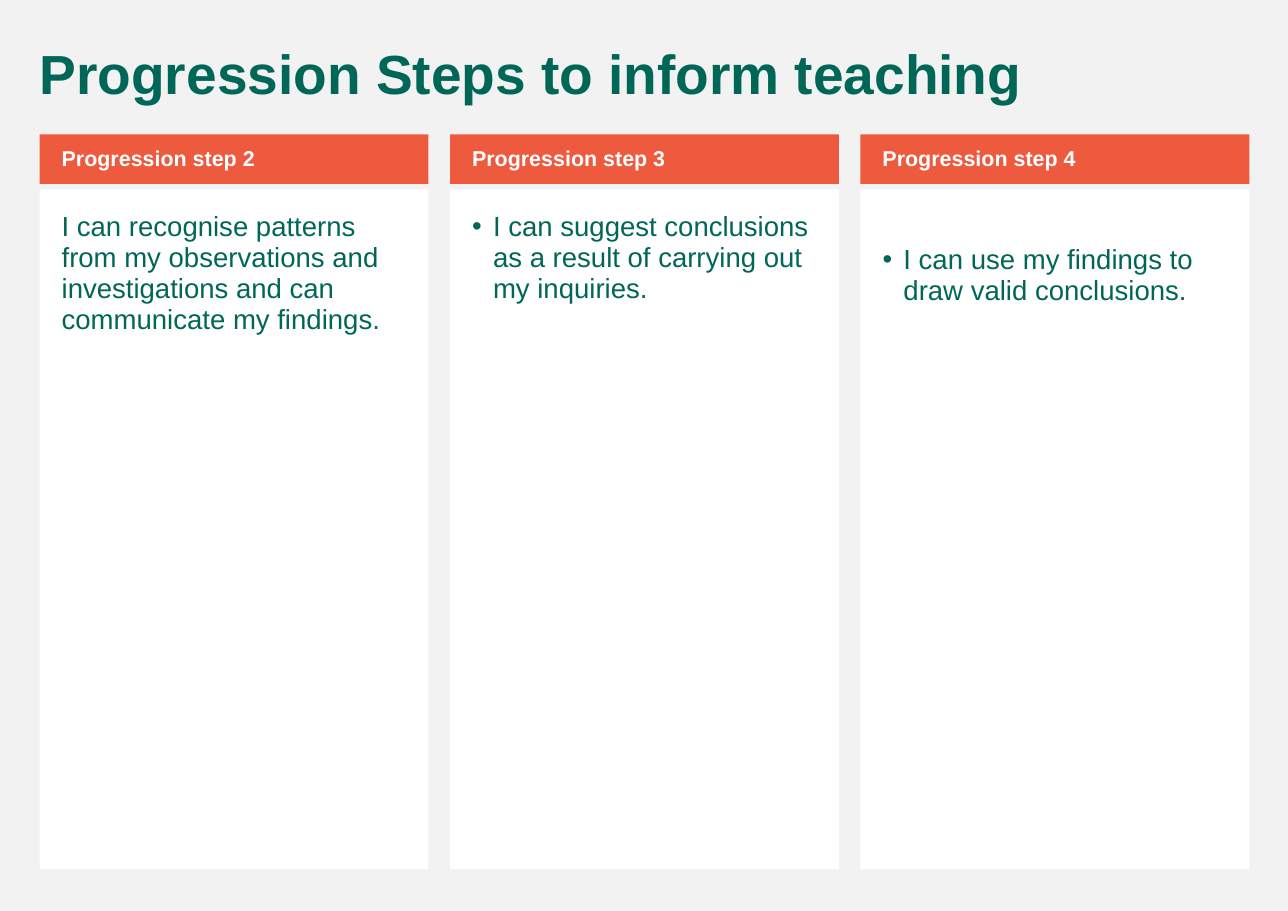
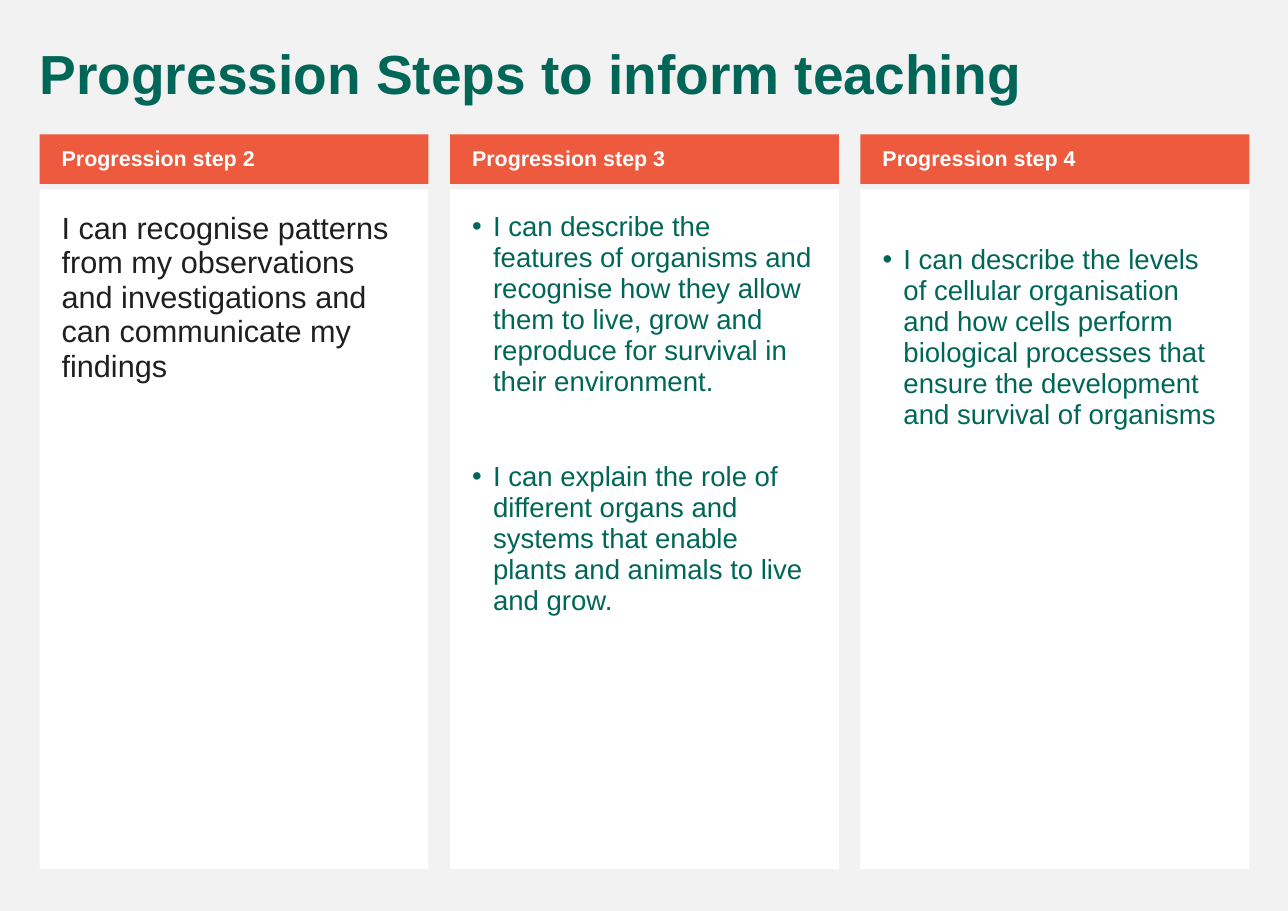
from pptx import Presentation
from pptx.dml.color import RGBColor
from pptx.enum.shapes import MSO_SHAPE
from pptx.enum.text import MSO_ANCHOR, MSO_AUTO_SIZE, PP_ALIGN
from pptx.util import Inches, Pt

# Shared style
COLORS = {
    "background": "F2F2F2",
    "panel": "FFFFFF",
    "header": "ED5A3E",
    "header_text": "FFFFFF",
    "green": "006758",
    "dark": "1F1F1F",
}
FONT = "Arial"
LINE_SPACING = 0.94
TITLE = "Progression Steps to inform teaching"
STEPS = ["Progression step 2", "Progression step 3", "Progression step 4"]

# Column grid
LEFT, RIGHT, COLUMN_WIDTH = 0.36, 11.34, 3.53
COLUMN_PITCH = (RIGHT - LEFT - COLUMN_WIDTH) / (len(STEPS) - 1)
HEADER_TOP, HEADER_HEIGHT = 1.22, 0.45
PANEL_TOP, PANEL_HEIGHT = 1.72, 6.17
PADDING, LOWERED_TOP = 0.2, 0.5
BULLET_INDENT = 0.19
BULLET_GAP = 41.4

# Slide content: the first column is plain text, the others are lists
SLIDES = [
    {
        "intro": "I can recognise patterns from my observations and "
                 "investigations and can communicate my findings.",
        "intro_size": 18,
        "intro_color": "green",
        "lists": [
            ["I can suggest conclusions as a result of carrying out my inquiries."],
            ["I can use my findings to draw valid conclusions."],
        ],
    },
    {
        "intro": "I can recognise patterns from my observations and "
                 "investigations and can communicate my findings",
        "intro_size": 20,
        "intro_color": "dark",
        "lists": [
            ["I can describe the features of organisms and recognise how they "
             "allow them to live, grow and reproduce for survival in their "
             "environment.",
             "I can explain the role of different organs and systems that "
             "enable plants and animals to live and grow."],
            ["I can describe the levels of cellular organisation and how cells "
             "perform biological processes that ensure the development and "
             "survival of organisms"],
        ],
    },
]


def color(name):
    return RGBColor.from_string(COLORS[name])


def column_left(index):
    return LEFT + index * COLUMN_PITCH


def place(shape, left, top, width, height):
    shape.left, shape.top = Inches(left), Inches(top)
    shape.width, shape.height = Inches(width), Inches(height)


def set_frame(shape, margins, anchor=MSO_ANCHOR.TOP):
    """Set the insets (left, top, right, bottom) and the anchor."""
    frame = shape.text_frame
    frame.word_wrap = True
    frame.auto_size = MSO_AUTO_SIZE.NONE
    frame.vertical_anchor = anchor
    (frame.margin_left, frame.margin_top,
     frame.margin_right, frame.margin_bottom) = map(Inches, margins)


def write(shape, texts, size, color_name, bold=False):
    """Write one formatted paragraph for each text."""
    frame = shape.text_frame
    frame.text = "\n".join(texts)
    for paragraph in frame.paragraphs:
        paragraph.alignment = PP_ALIGN.LEFT
        paragraph.line_spacing = LINE_SPACING
        paragraph.space_before = Pt(0)
        for run in paragraph.runs:
            run.font.name = FONT
            run.font.size = Pt(size)
            run.font.bold = bold
            run.font.color.rgb = color(color_name)


def fill_shape(shape, fill_name):
    shape.fill.solid()
    shape.fill.fore_color.rgb = color(fill_name)
    shape.line.fill.background()


def add_box(slide, column, top, height, fill_name):
    shape = slide.shapes.add_shape(
        MSO_SHAPE.RECTANGLE, Inches(column_left(column)), Inches(top),
        Inches(COLUMN_WIDTH), Inches(height))
    shape.shadow.inherit = False
    fill_shape(shape, fill_name)
    return shape


def set_title(slide):
    title = slide.shapes.title
    place(title, 0.26, 0.36, 11.08, 0.65)
    set_frame(title, (0.1, 0.05, 0.1, 0.05))
    write(title, [TITLE], 36, "green", bold=True)


def add_header(slide, column, text):
    header = add_box(slide, column, HEADER_TOP, HEADER_HEIGHT, "header")
    set_frame(header, (PADDING, 0.05, 0.1, 0.05), MSO_ANCHOR.MIDDLE)
    write(header, [text], 14, "header_text", bold=True)


def add_intro(slide, text, size, color_name):
    panel = add_box(slide, 0, PANEL_TOP, PANEL_HEIGHT, "panel")
    set_frame(panel, (PADDING,) * 4)
    write(panel, [text], size, color_name)


def fill_list(placeholder, column, items):
    place(placeholder, column_left(column), PANEL_TOP, COLUMN_WIDTH, PANEL_HEIGHT)
    fill_shape(placeholder, "panel")
    top = LOWERED_TOP if column == len(STEPS) - 1 else PADDING
    set_frame(placeholder, (PADDING, top, PADDING, PADDING))
    write(placeholder, items, 18, "green")
    for index, paragraph in enumerate(placeholder.text_frame.paragraphs):
        if index:
            paragraph.space_before = Pt(BULLET_GAP)
        # Hanging indent; the bullet comes from the template
        properties = paragraph._p.get_or_add_pPr()
        properties.set("marL", str(Inches(BULLET_INDENT)))
        properties.set("indent", str(-Inches(BULLET_INDENT)))


def build_slide(presentation, content):
    layout = presentation.slide_layouts.get_by_name("Two Content")
    slide = presentation.slides.add_slide(layout)
    set_title(slide)
    for column, step in enumerate(STEPS):
        add_header(slide, column, step)
    add_intro(slide, content["intro"], content["intro_size"], content["intro_color"])
    for column, items in enumerate(content["lists"], start=1):
        fill_list(slide.placeholders[column], column, items)


def main():
    presentation = Presentation()
    presentation.slide_width = Inches(11.69)
    presentation.slide_height = Inches(8.27)
    background = presentation.slide_master.background.fill
    background.solid()
    background.fore_color.rgb = color("background")
    for content in SLIDES:
        build_slide(presentation, content)
    presentation.save("out.pptx")


if __name__ == "__main__":
    main()
